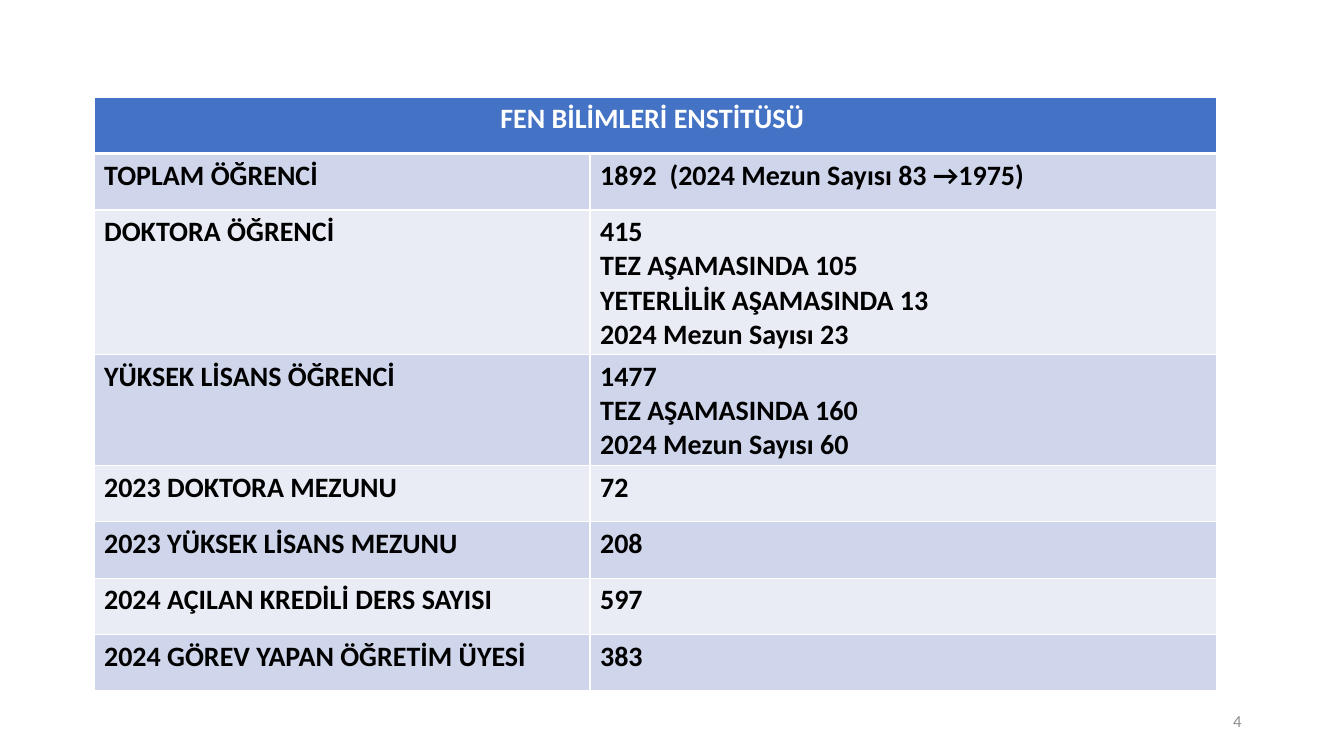
from lxml.etree import SubElement
from pptx import Presentation
from pptx.dml.color import RGBColor
from pptx.enum.text import MSO_ANCHOR, PP_ALIGN
from pptx.oxml.ns import qn
from pptx.util import Cm, Pt

HEADING = "FEN BİLİMLERİ ENSTİTÜSÜ "
STATISTICS = [
    ("TOPLAM ÖĞRENCİ", ["1892  (2024 Mezun Sayısı 83 →1975)"]),
    ("DOKTORA ÖĞRENCİ", ["415", "TEZ AŞAMASINDA 105",
                         "YETERLİLİK AŞAMASINDA 13", "2024 Mezun Sayısı 23"]),
    ("YÜKSEK LİSANS ÖĞRENCİ", ["1477", "TEZ AŞAMASINDA 160",
                               "2024 Mezun Sayısı 60"]),
    ("2023 DOKTORA MEZUNU", ["72"]),
    ("2023 YÜKSEK LİSANS MEZUNU", ["208"]),
    ("2024 AÇILAN KREDİLİ DERS SAYISI", ["597"]),
    ("2024 GÖREV YAPAN ÖĞRETİM ÜYESİ", ["383"]),
]
COLUMN_WIDTHS = [12.5, 15.8]
ROW_HEIGHTS = {1: 1.42, 3: 2.44, 4: 3.5}  # by number of text lines


def color(hex_string):
    return RGBColor.from_string(hex_string)


class SlideBuilder:
    font = "Calibri"
    white, black, gray = "FFFFFF", "000000", "8C8C8C"
    header_fill = "4472C4"
    bands = ["CFD5EA", "E9EBF5"]

    def __init__(self, deck):
        self.page = deck.slides.add_slide(deck.slide_layouts[6])

    def add_lines(self, frame, lines, size, ink, bold=False, align=PP_ALIGN.LEFT):
        for index, line in enumerate(lines):
            para = frame.add_paragraph() if index else frame.paragraphs[0]
            para.alignment = align
            span = para.add_run()
            span.text = line
            span.font.name = self.font
            span.font.size = Pt(size)
            span.font.bold = bold
            span.font.color.rgb = color(ink)

    def page_number(self, number, left, top, width, height):
        box = self.page.shapes.add_textbox(Cm(left), Cm(top), Cm(width), Cm(height))
        frame = box.text_frame
        frame.word_wrap = True
        frame.vertical_anchor = MSO_ANCHOR.MIDDLE
        self.add_lines(frame, [number], 12, self.gray, align=PP_ALIGN.RIGHT)

    def format_cell(self, cell, fill, top=1, bottom=1):
        """Fill the cell and rule its edges; top and bottom are line widths in points."""
        properties = cell._tc.get_or_add_tcPr()
        edges = {"a:lnL": 1, "a:lnR": 1, "a:lnT": top, "a:lnB": bottom}
        for edge, points in edges.items():
            line = SubElement(properties, qn(edge), w=str(Pt(points)))
            solid = SubElement(line, qn("a:solidFill"))
            SubElement(solid, qn("a:srgbClr"), val=self.white)
        cell.fill.solid()
        cell.fill.fore_color.rgb = color(fill)

    def statistics_table(self, left, top):
        heights = [ROW_HEIGHTS[1]] + [ROW_HEIGHTS[len(lines)] for _, lines in STATISTICS]
        table = self.page.shapes.add_table(
            len(heights), len(COLUMN_WIDTHS), Cm(left), Cm(top),
            Cm(sum(COLUMN_WIDTHS)), Cm(sum(heights))).table
        for column, width in zip(table.columns, COLUMN_WIDTHS):
            column.width = Cm(width)
        for row, height in zip(table.rows, heights):
            row.height = Cm(height)

        header = table.cell(0, 0)
        header.merge(table.cell(0, 1))
        for cell in table.rows[0].cells:
            self.format_cell(cell, self.header_fill, bottom=3)
        self.add_lines(header.text_frame, [HEADING], 20, self.white, True, PP_ALIGN.CENTER)

        for index, (label, lines) in enumerate(STATISTICS):
            for cell, content in zip(table.rows[index + 1].cells, ([label], lines)):
                self.format_cell(cell, self.bands[index % 2], top=1 if index else 3)
                self.add_lines(cell.text_frame, content, 20, self.black, True)


def main():
    deck = Presentation()
    deck.slide_width, deck.slide_height = Cm(33.87), Cm(19.05)
    builder = SlideBuilder(deck)
    builder.page_number("4", 23.92, 17.66, 7.62, 1.01)
    builder.statistics_table(2.37, 2.45)
    deck.save("out.pptx")


if __name__ == "__main__":
    main()
